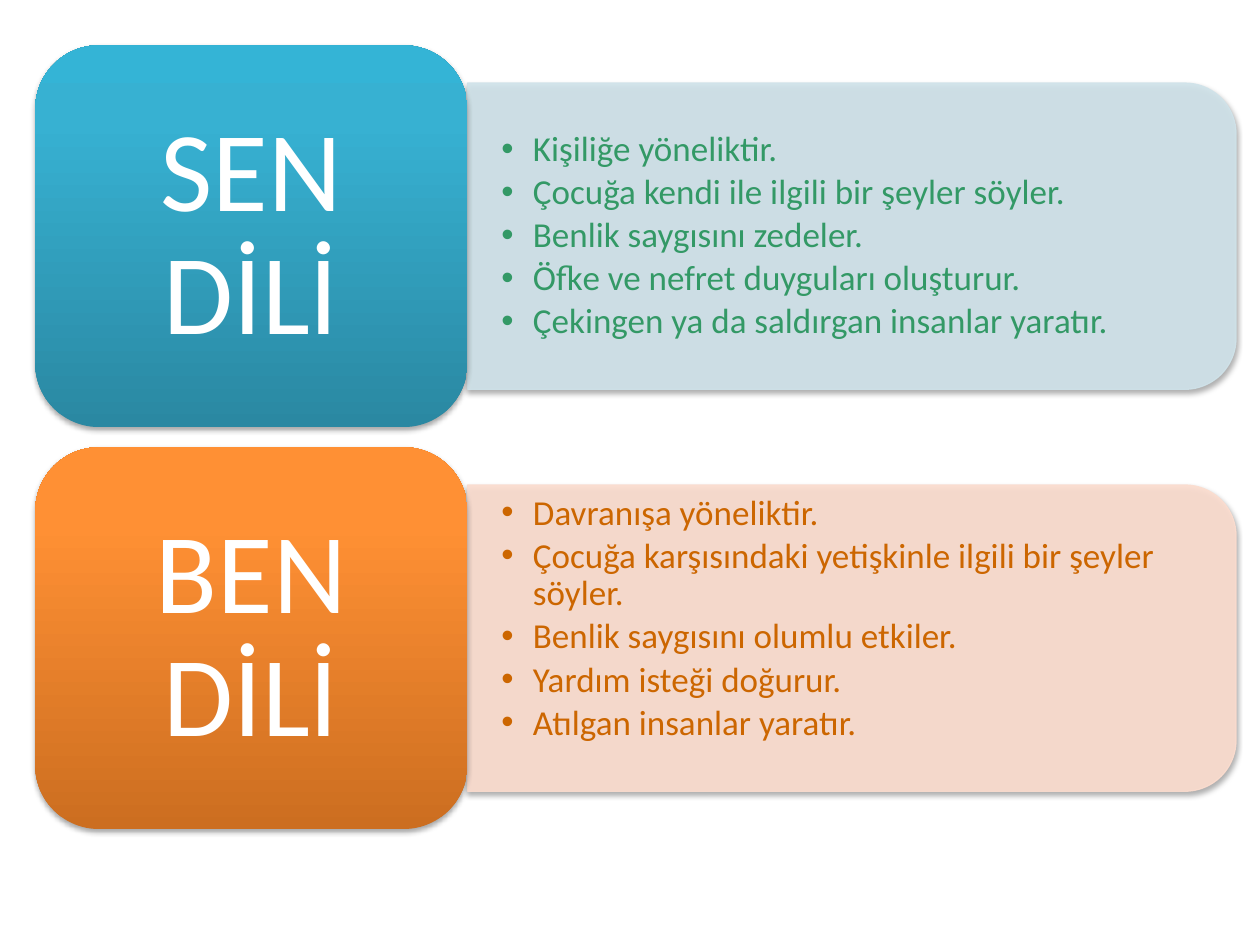
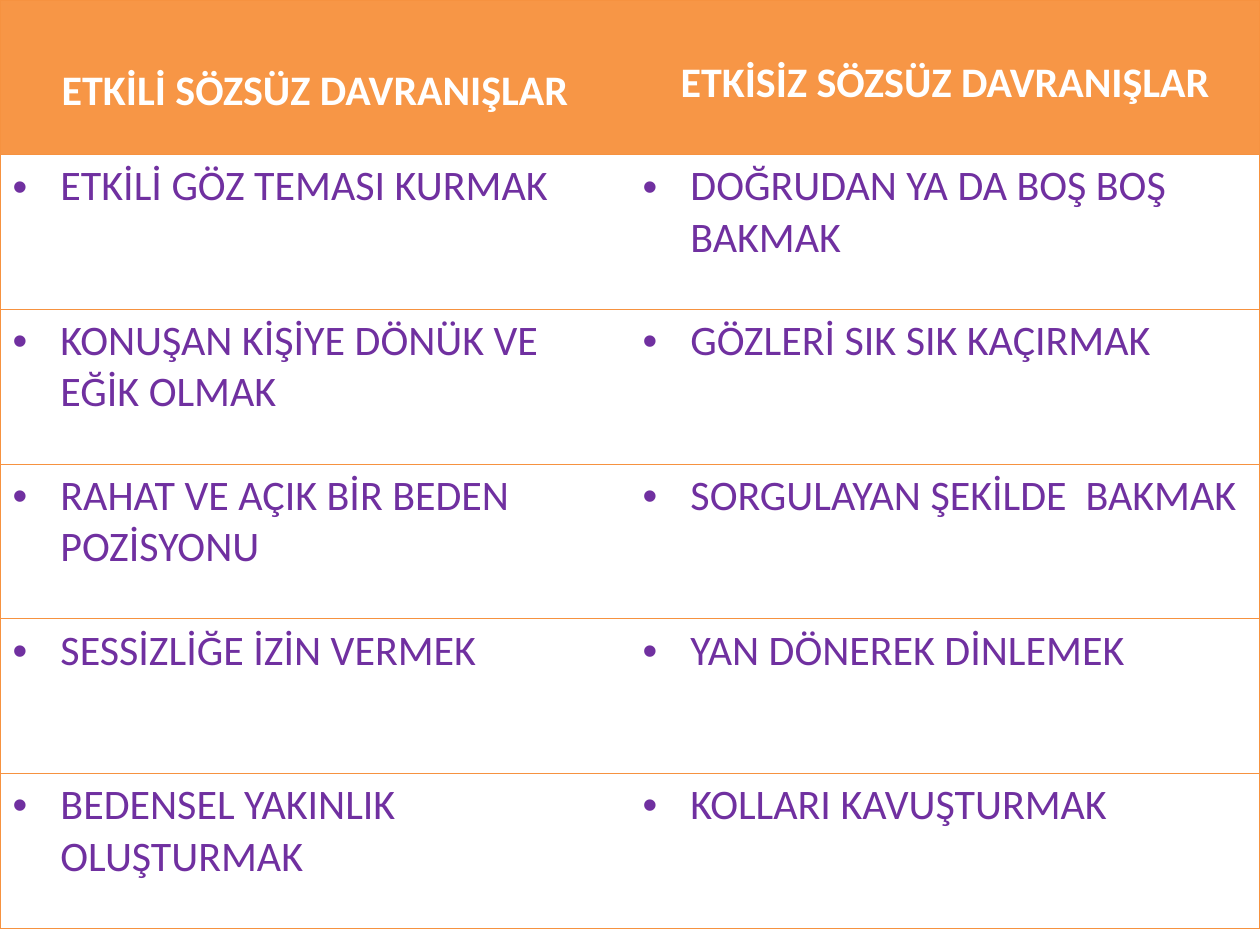
from copy import deepcopy

from pptx import Presentation, util as u
from pptx.dml.color import RGBColor
from pptx.enum import shapes, text
from pptx.oxml import parse_xml
from pptx.oxml.ns import nsdecls, qn

FONT = "Calibri"
WHITE, PURPLE, ORANGE, BORDER = "FFFFFF", "7030A0", "F79646", "F69240"
COLUMNS, ROWS = 100, 75


def color(value):
    return RGBColor.from_string(value)


def element(markup):
    """Make a drawing element from markup with the a: prefix."""
    tag, rest = markup[1:].split(" ", 1) if " " in markup.split(">")[0] else markup[1:].split(">", 1)
    joint = " " if " " in markup.split(">")[0] else ">"
    return parse_xml(f"<{tag} {nsdecls('a')}{joint}{rest}")


def write(frame, lines, size, fill, bold=False, align=text.PP_ALIGN.LEFT,
          bullet_indent=0, spacing=1.0, after=0):
    """Write one paragraph per line, all in the same format."""
    frame.word_wrap = True
    for index, line in enumerate(lines):
        paragraph = frame.paragraphs[0] if index == 0 else frame.add_paragraph()
        paragraph.alignment = align
        paragraph.line_spacing = spacing
        paragraph.space_after = u.Pt(after)
        run = paragraph.add_run()
        run.text = line
        run.font.name, run.font.size, run.font.bold = FONT, u.Pt(size), bold
        run.font.color.rgb = color(fill)
        if bullet_indent:
            properties = paragraph._p.get_or_add_pPr()
            indent = u.Inches(bullet_indent)
            properties.set("marL", str(indent))
            properties.set("indent", str(-indent))
            properties.append(element('<a:buFont typeface="Arial"/>'))
            properties.append(element('<a:buChar char="•"/>'))


class Deck:
    """Holds the grid, the shared style and the current slide."""

    def __init__(self):
        self.presentation = Presentation()
        self.presentation.slide_width = u.Inches(10)
        self.presentation.slide_height = u.Inches(7.5)
        self.slide = None

    def new_slide(self):
        blank = self.presentation.slide_layouts[6]
        self.slide = self.presentation.slides.add_slide(blank)

    def box(self, left, top, width, height):
        column = self.presentation.slide_width / COLUMNS
        row = self.presentation.slide_height / ROWS
        return [round(n) for n in (left * column, top * row, width * column, height * row)]

    def margins(self, frame, extra_bottom=0.0):
        frame.margin_left = frame.margin_right = u.Inches(0.27)
        frame.margin_top = u.Inches(0.14)
        frame.margin_bottom = u.Inches(0.14 + extra_bottom)
        frame.vertical_anchor = text.MSO_ANCHOR.MIDDLE

    def shadow(self, shape):
        shape.shadow.inherit = False
        effects = shape._element.spPr.find(qn("a:effectLst"))
        effects.append(element(
            f'<a:outerShdw blurRad="{u.Pt(3.1)}" dist="{u.Pt(1.8)}" dir="5400000" rotWithShape="0">'
            '<a:srgbClr val="000000"><a:alpha val="35000"/></a:srgbClr></a:outerShdw>'))

    def panel(self, left, top, width, height, fill):
        """A band rounded on its right side: an upright shape turned a quarter."""
        upright = (left + (width - height) / 2, top + (height - width) / 2, height, width)
        shape = self.slide.shapes.add_shape(
            shapes.MSO_SHAPE.ROUND_2_SAME_RECTANGLE, *self.box(*upright))
        shape.rotation = 90
        shape.fill.solid()
        shape.fill.fore_color.rgb = color(fill)
        shape.line.color.rgb = color(fill)
        shape.line.width = u.Pt(0.75)
        for tone in shape._element.spPr.iter(qn("a:srgbClr")):
            tone.append(element('<a:alpha val="90000"/>'))
        self.shadow(shape)

    def bullets(self, left, top, width, height, lines, fill, extra_bottom):
        frame = self.slide.shapes.add_textbox(*self.box(left, top, width, height)).text_frame
        self.margins(frame, extra_bottom)
        write(frame, lines, 20, fill, bullet_indent=0.25, spacing=0.9, after=3)

    def tile(self, left, top, width, height, label, tones):
        shape = self.slide.shapes.add_shape(
            shapes.MSO_SHAPE.ROUNDED_RECTANGLE, *self.box(left, top, width, height))
        shape.fill.gradient()
        shape.fill.gradient_angle = 90
        stop_list = next(shape._element.spPr.iter(qn("a:gsLst")))
        stop_list.append(deepcopy(stop_list[-1]))
        for stop, tone, position in zip(shape.fill.gradient_stops, tones, (0, 0.8, 1)):
            stop.color.rgb = color(tone)
            stop.position = position
        shape.line.fill.background()
        self.shadow(shape)
        self.margins(shape.text_frame)
        write(shape.text_frame, [label], 65, WHITE, align=text.PP_ALIGN.CENTER, spacing=0.9)

    def borders(self, cell, visible):
        properties = cell._tc.get_or_add_tcPr()
        for side in "LRTB":
            paint = (f'<a:solidFill><a:srgbClr val="{BORDER}"/></a:solidFill>'
                     if side in visible else "<a:noFill/>")
            properties.append(element(f'<a:ln{side} w="{u.Pt(0.75)}">{paint}</a:ln{side}>'))

    def table(self, left, top, width, height, headers, header_margins, rows):
        table = self.slide.shapes.add_table(
            len(rows) + 1, len(headers), *self.box(left, top, width, height)).table
        table.first_row = table.horz_banding = False
        for row_index, row in enumerate([headers, *rows]):
            for column_index, (content, outer) in enumerate(zip(row, "LR")):
                cell = table.cell(row_index, column_index)
                self.borders(cell, outer + "TB")
                if row_index == 0:
                    cell.fill.solid()
                    cell.fill.fore_color.rgb = color(ORANGE)
                    cell.margin_top = u.Inches(header_margins[column_index])
                    write(cell.text_frame, [content], 24, WHITE, bold=True,
                          align=text.PP_ALIGN.CENTER)
                else:
                    cell.fill.background()
                    write(cell.text_frame, [content], 24, PURPLE, bullet_indent=0.38)


# Content: label, tile tones, panel colour, text colour, extra bottom margin, points
LANGUAGES = [
    ("SEN DİLİ", ("2A88A2", "37B1D2", "34B4D6"), "D0E3EA", "339966", 0, [
        "Kişiliğe yöneliktir.",
        "Çocuğa kendi ile ilgili bir şeyler söyler.",
        "Benlik saygısını zedeler.",
        "Öfke ve nefret duyguları oluşturur.",
        "Çekingen ya da saldırgan insanlar yaratır.",
    ]),
    ("BEN DİLİ", ("CC6E20", "FF9034", "FF9136"), "FCDDCF", "CC6600", 0.31, [
        "Davranışa yöneliktir.",
        "Çocuğa karşısındaki yetişkinle ilgili bir şeyler söyler.",
        "Benlik saygısını olumlu etkiler.",
        "Yardım isteği doğurur.",
        "Atılgan insanlar yaratır.",
    ]),
]
BEHAVIOUR_HEADERS = ("ETKİLİ SÖZSÜZ DAVRANIŞLAR", "ETKİSİZ SÖZSÜZ DAVRANIŞLAR")
BEHAVIOURS = [
    ("ETKİLİ GÖZ TEMASI KURMAK", "DOĞRUDAN YA DA BOŞ BOŞ BAKMAK"),
    ("KONUŞAN KİŞİYE DÖNÜK VE EĞİK OLMAK", "GÖZLERİ SIK SIK KAÇIRMAK"),
    ("RAHAT VE AÇIK BİR BEDEN POZİSYONU", "SORGULAYAN ŞEKİLDE  BAKMAK"),
    ("SESSİZLİĞE İZİN VERMEK", "YAN DÖNEREK DİNLEMEK"),
    ("BEDENSEL YAKINLIK OLUŞTURMAK", "KOLLARI KAVUŞTURMAK"),
]


def main():
    deck = Deck()

    # Two ways of speaking, one band each
    deck.new_slide()
    for index, (label, tones, panel, ink, extra, points) in enumerate(LANGUAGES):
        top = 3.6 + index * 31.9
        deck.panel(37.1, top + 3, 61, 24.3, panel)
        deck.bullets(37.1, top + 4.2, 59.8, 21.9, points, ink, extra)
        deck.tile(2.8, top, 34.3, 30.3, label, tones)

    # Effective and ineffective non-verbal behaviour
    deck.new_slide()
    deck.table(0, 0, COLUMNS, 73.7, BEHAVIOUR_HEADERS, (0.52, 0.46), BEHAVIOURS)

    deck.presentation.save("out.pptx")


if __name__ == "__main__":
    main()
